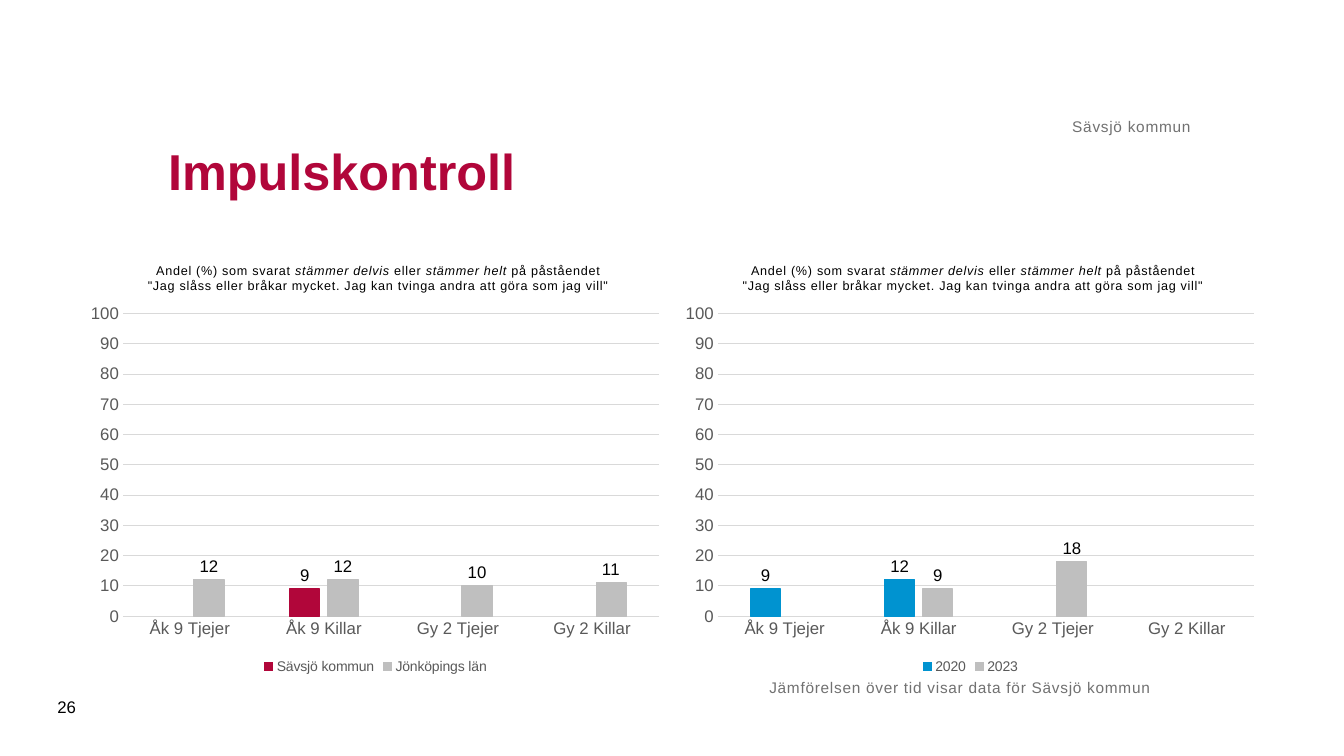
from lxml.etree import SubElement
from pptx import Presentation
from pptx.chart.data import CategoryChartData
from pptx.dml.color import RGBColor
from pptx.enum.chart import XL_CHART_TYPE, XL_LABEL_POSITION, XL_LEGEND_POSITION, XL_TICK_MARK
from pptx.enum.text import MSO_ANCHOR, PP_ALIGN
from pptx.oxml.ns import qn
from pptx.util import Inches, Pt

SLIDE_WIDTH = Inches(13.33)
SLIDE_HEIGHT = Inches(7.5)
COLUMN = SLIDE_WIDTH / 100
ROW = SLIDE_HEIGHT / 100

FONT = "Arial"
NUMBER_FORMAT = "#,##0;#,##0"
BLACK = RGBColor(0x00, 0x00, 0x00)
CRIMSON = RGBColor(0xB1, 0x06, 0x3A)
BLUE = RGBColor(0x00, 0x93, 0xD0)
SILVER = RGBColor(0xBF, 0xBF, 0xBF)
GRID_GREY = RGBColor(0xD9, 0xD9, 0xD9)
AXIS_GREY = RGBColor(0x59, 0x59, 0x59)
NOTE_GREY = RGBColor(0x71, 0x71, 0x71)

CATEGORIES = ["Åk 9 Tjejer", "Åk 9 Killar", "Gy 2 Tjejer", "Gy 2 Killar"]
QUESTION = [
    [("Andel (%) som svarat ", False), ("stämmer delvis", True), (" eller ", False),
     ("stämmer helt", True), (" på påståendet", False)],
    [('"Jag slåss eller bråkar mycket. Jag kan tvinga andra att göra som jag vill"', False)],
]
CHARTS = [
    (5.93, [("Sävsjö kommun", [None, 9, None, None], CRIMSON),
            ("Jönköpings län", [12, 12, 10, 11], SILVER)]),
    (50.19, [("2020", [9, 12, None, None], BLUE),
             ("2023", [None, 9, 18, None], SILVER)]),
]


def place(left, top, width, height):
    return int(left * COLUMN), int(top * ROW), int(width * COLUMN), int(height * ROW)


def style_font(font, size, color, bold=False, italic=False):
    font.name = FONT
    font.size = Pt(size)
    font.color.rgb = color
    font.bold = bold
    font.italic = italic


def add_run(paragraph, text, size, color, bold=False, italic=False, spacing=0):
    run = paragraph.add_run()
    run.text = text
    style_font(run.font, size, color, bold, italic)
    if spacing:
        run.font._element.set("spc", str(int(spacing * 100)))


def add_text(slide, box, text, size, color, anchor=MSO_ANCHOR.MIDDLE,
             align=PP_ALIGN.LEFT, bold=False, spacing=0, inset=True):
    frame = slide.shapes.add_textbox(*place(*box)).text_frame
    frame.word_wrap = True
    frame.vertical_anchor = anchor
    if not inset:
        frame.margin_left = frame.margin_right = 0
        frame.margin_top = frame.margin_bottom = 0
    paragraph = frame.paragraphs[0]
    paragraph.alignment = align
    add_run(paragraph, text, size, color, bold, spacing=spacing)


def set_layout(element, inner=False, **shares):
    layout = element.get_or_add_layout() if hasattr(element, "get_or_add_layout") else element.find(qn("c:layout"))
    if layout is None:
        layout = element.makeelement(qn("c:layout"))
        element.insert(0, layout)
    for child in list(layout):
        layout.remove(child)
    manual = SubElement(layout, qn("c:manualLayout"))
    settings = {"layoutTarget": "inner"} if inner else {}
    settings.update(xMode="edge", yMode="edge", **shares)
    for name, value in settings.items():
        SubElement(manual, qn(f"c:{name}")).set("val", str(value))


def add_question(chart):
    chart.has_title = True
    title = chart.chart_title
    title.include_in_layout = False
    frame = title.text_frame
    for index, line in enumerate(QUESTION):
        paragraph = frame.add_paragraph() if index else frame.paragraphs[0]
        paragraph.alignment = PP_ALIGN.CENTER
        for text, italic in line:
            add_run(paragraph, text, 9, BLACK, italic=italic, spacing=0.5)
    set_layout(title._element, x=0.11, y=0.04)


def style_axes(chart):
    for axis in (chart.category_axis, chart.value_axis):
        axis.major_tick_mark = axis.minor_tick_mark = XL_TICK_MARK.NONE
        style_font(axis.tick_labels.font, 12, AXIS_GREY)
    category_line = chart.category_axis.format.line
    category_line.color.rgb = GRID_GREY
    category_line.width = Pt(0.75)
    value_axis = chart.value_axis
    value_axis.minimum_scale = 0
    value_axis.maximum_scale = 100
    value_axis.major_unit = 10
    value_axis.tick_labels.number_format = NUMBER_FORMAT
    value_axis.tick_labels.number_format_is_linked = False
    value_axis.format.line.fill.background()
    gridline = value_axis.major_gridlines.format.line
    gridline.color.rgb = GRID_GREY
    gridline.width = Pt(0.75)


def style_series(series, color):
    series.format.fill.solid()
    series.format.fill.fore_color.rgb = color
    series.format.line.color.rgb = color
    series.format.line.width = Pt(0.75)
    labels = series.data_labels
    labels.show_value = True
    labels.position = XL_LABEL_POSITION.OUTSIDE_END
    labels.number_format = NUMBER_FORMAT
    labels.number_format_is_linked = False
    style_font(labels.font, 12, BLACK)


def add_share_chart(slide, left, series_rows):
    data = CategoryChartData()
    data.categories = CATEGORIES
    for name, values, _ in series_rows:
        data.add_series(name, values)
    chart = slide.shapes.add_chart(
        XL_CHART_TYPE.COLUMN_CLUSTERED, *place(left, 32, 44.04, 57.73), data).chart
    style_font(chart.font, 10, BLACK)
    add_question(chart)
    style_axes(chart)
    plot = chart.plots[0]
    plot.vary_by_categories = False
    plot.gap_width = 219
    plot.overlap = -27
    for series, (_, _, color) in zip(plot.series, series_rows):
        style_series(series, color)
    chart.has_legend = True
    chart.legend.position = XL_LEGEND_POSITION.BOTTOM
    chart.legend.include_in_layout = False
    style_font(chart.legend.font, 10, AXIS_GREY)
    plot_area = chart._chartSpace.chart.plotArea
    set_layout(plot_area, inner=True, x=0.073, y=0.164, w=0.906, h=0.694)


def main():
    presentation = Presentation()
    presentation.slide_width = SLIDE_WIDTH
    presentation.slide_height = SLIDE_HEIGHT
    slide = presentation.slides.add_slide(presentation.slide_layouts[6])
    for left, series_rows in CHARTS:
        add_share_chart(slide, left, series_rows)
    add_text(slide, (11.78, 13.07, 76.82, 18.93), "Impulskontroll", 36, CRIMSON, bold=True)
    add_text(slide, (11.78, 8.27, 76.82, 9.73), "Sävsjö kommun", 11, NOTE_GREY,
             anchor=MSO_ANCHOR.BOTTOM, align=PP_ALIGN.RIGHT, spacing=0.5, inset=False)
    add_text(slide, (3.53, 90.8, 4.28, 5.33), "26", 12, BLACK)
    add_text(slide, (57.24, 89.73, 39.83, 10), "Jämförelsen över tid visar data för Sävsjö kommun",
             11, NOTE_GREY, anchor=MSO_ANCHOR.TOP, spacing=0.5, inset=False)
    presentation.save("out.pptx")


if __name__ == "__main__":
    main()
